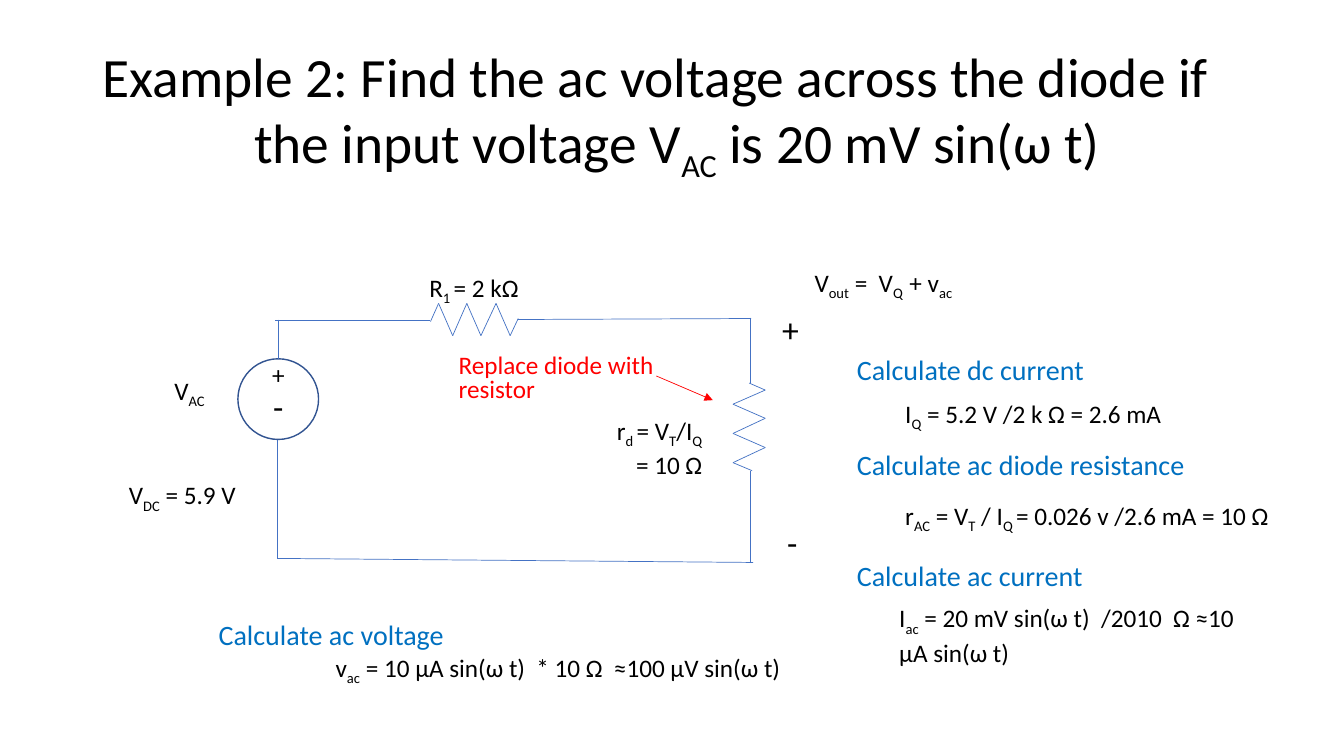
import typing

import pptx
import pptx.dml.color
import pptx.enum.shapes
import pptx.enum.text
import pptx.oxml
import pptx.oxml.ns
import pptx.util

PX = 9144  # EMU per px, 100 px to the inch
FONT = "Calibri"
BLACK, RED, BLUE = "000000", "FF0000", "0070C0"
WIRE, RING = "4472C4", "325491"

Point = typing.Tuple[int, int]


class Label(typing.NamedTuple):
    left: int
    top: int
    width: int
    height: int
    text: str  # braces hold subscripts
    size: float = 18
    color: str = BLACK


class Wire(typing.NamedTuple):
    points: typing.List[Point]
    color: str = WIRE
    arrow: bool = False


def px(value: int) -> int:
    return pptx.util.Emu(value * PX)


def rgb(value: str) -> pptx.dml.color.RGBColor:
    return pptx.dml.color.RGBColor.from_string(value)


def write(frame, text: str, *, size: float = 18, color: str = BLACK,
          lines: typing.Optional[float] = None, before: float = 0) -> None:
    """Fill a frame; line breaks part paragraphs, braces mark subscripts."""
    frame.word_wrap = True
    for index, row in enumerate(text.split("\n")):
        para = frame.add_paragraph() if index else frame.paragraphs[0]
        para.alignment = pptx.enum.text.PP_ALIGN.LEFT
        para.space_before = pptx.util.Pt(before)
        if lines:
            para.line_spacing = lines
        for part, piece in enumerate(row.replace("}", "{").split("{")):
            if not piece:
                continue
            run = para.add_run()
            run.text = piece
            run.font.name = FONT
            run.font.size = pptx.util.Pt(size)
            run.font.color.rgb = rgb(color)
            if part % 2:
                run._r.get_or_add_rPr().set("baseline", "-25000")


def indent(para, left: int, first: int = 0) -> None:
    props = para._p.get_or_add_pPr()
    props.set("marL", str(px(left)))
    props.set("indent", str(px(first)))


def add_label(slide, label: Label, **style):
    box = slide.shapes.add_textbox(*map(px, label[:4]))
    write(box.text_frame, label.text, size=label.size, color=label.color, **style)
    return box.text_frame


def add_wire(slide, wire: Wire) -> None:
    for start, end in zip(wire.points, wire.points[1:]):
        line = slide.shapes.add_connector(
            pptx.enum.shapes.MSO_CONNECTOR.STRAIGHT, *map(px, start + end))
        line.line.color.rgb = rgb(wire.color)
        line.line.width = pptx.util.Pt(0.5)
        props = line._element.spPr
        if wire.arrow:
            tail = pptx.oxml.parse_xml(
                f'<a:tailEnd {pptx.oxml.ns.nsdecls("a")} type="triangle"/>')
            line.line._get_or_add_ln().append(tail)
        props.append(pptx.oxml.parse_xml(
            f'<a:effectLst {pptx.oxml.ns.nsdecls("a")}/>'))


# Resistor zigzags: six even half turns between two short leads
ACROSS = [(427, 319)] + [(435 + 57 * i // 4, (301, 333)[i % 2])
                         for i in range(6)] + [(514, 316)]
DOWN = [(743, 380)] + [(759 - 32 * (i % 2), 387 + 72 * i // 5)
                       for i in range(6)] + [(746, 467)]

WIRES = [
    Wire([(276, 317), (276, 356)]),
    Wire([(275, 437), (275, 555)]),
    Wire([(273, 318), (427, 318)]),
    Wire(ACROSS),
    Wire([(514, 317), (745, 316)]),
    Wire([(744, 315), (744, 380)]),
    Wire(DOWN),
    Wire([(744, 467), (744, 558)]),
    Wire([(275, 554), (747, 558)]),
    Wire([(651, 373), (707, 397)], RED, True),
]

LABELS = [
    # Source and circuit
    Label(260, 352, 36, 40, "+"),
    Label(261, 378, 36, 50, "-", 24),
    Label(163, 367, 72, 40, "V{AC}"),
    Label(118, 471, 138, 40, "V{DC} = 5.9 V"),
    Label(416, 265, 173, 40, "R{1 }= 2 kΩ"),
    # Output
    Label(798, 260, 168, 40, "V{out} =  V{Q  }+ v{ac}"),
    Label(766, 302, 36, 50, "+", 24),
    Label(771, 513, 36, 50, "-", 24),
    # Calculations
    Label(840, 345, 314, 44, "Calculate dc current", 20, BLUE),
    Label(888, 390, 312, 40, "I{Q} = 5.2 V /2 k Ω = 2.6 mA"),
    Label(840, 439, 397, 44, "Calculate ac diode resistance", 20, BLUE),
    Label(888, 491, 411, 40, "r{AC} = V{T} / I{Q }= 0.026 v /2.6 mA = 10 Ω"),
    Label(840, 549, 397, 44, "Calculate ac current", 20, BLUE),
    Label(882, 593, 384, 71, "I{ac} = 20 mV sin(ω t)  /2010  Ω ≈10 μA sin(ω t)"),
    Label(207, 608, 397, 44, "Calculate ac voltage", 20, BLUE),
    Label(323, 642, 499, 40, "v{ac} = 10 μA sin(ω t)  * 10 Ω  ≈100 μV sin(ω t)"),
]
DIODE = Label(602, 407, 130, 71, "r{d }= V{T}/I{Q}\n= 10 Ω")
HINT = Label(445, 347, 234, 61, "Replace diode with resistor", 18, RED)


def main() -> None:
    deck = pptx.Presentation()
    deck.slide_width, deck.slide_height = px(1333), px(750)
    slide = deck.slides.add_slide(deck.slide_layouts[5])

    # Title with a hanging indent
    title = slide.shapes.title
    title.left, title.top, title.width, title.height = map(px, (92, 40, 1150, 145))
    frame = title.text_frame
    write(frame, "Example 2: Find the ac voltage across the diode if "
          "the input voltage V{AC} is 20 mV sin(ω t)", size=39.6, lines=0.9)
    indent(frame.paragraphs[0], 150, -150)
    frame.auto_size = pptx.enum.text.MSO_AUTO_SIZE.NONE
    frame.vertical_anchor = pptx.enum.text.MSO_ANCHOR.MIDDLE

    # Voltage source
    source = slide.shapes.add_shape(
        pptx.enum.shapes.MSO_SHAPE.OVAL, *map(px, (236, 356, 80, 80)))
    source.shadow.inherit = False
    source.fill.background()
    source.line.color.rgb = rgb(RING)
    source.line.width = pptx.util.Pt(1)

    # Circuit and text
    for wire in WIRES:
        add_wire(slide, wire)
    for label in LABELS:
        add_label(slide, label)
    indent(add_label(slide, DIODE).paragraphs[1], 19)
    add_label(slide, HINT, lines=0.8, before=10)

    deck.save("out.pptx")


if __name__ == "__main__":
    main()
